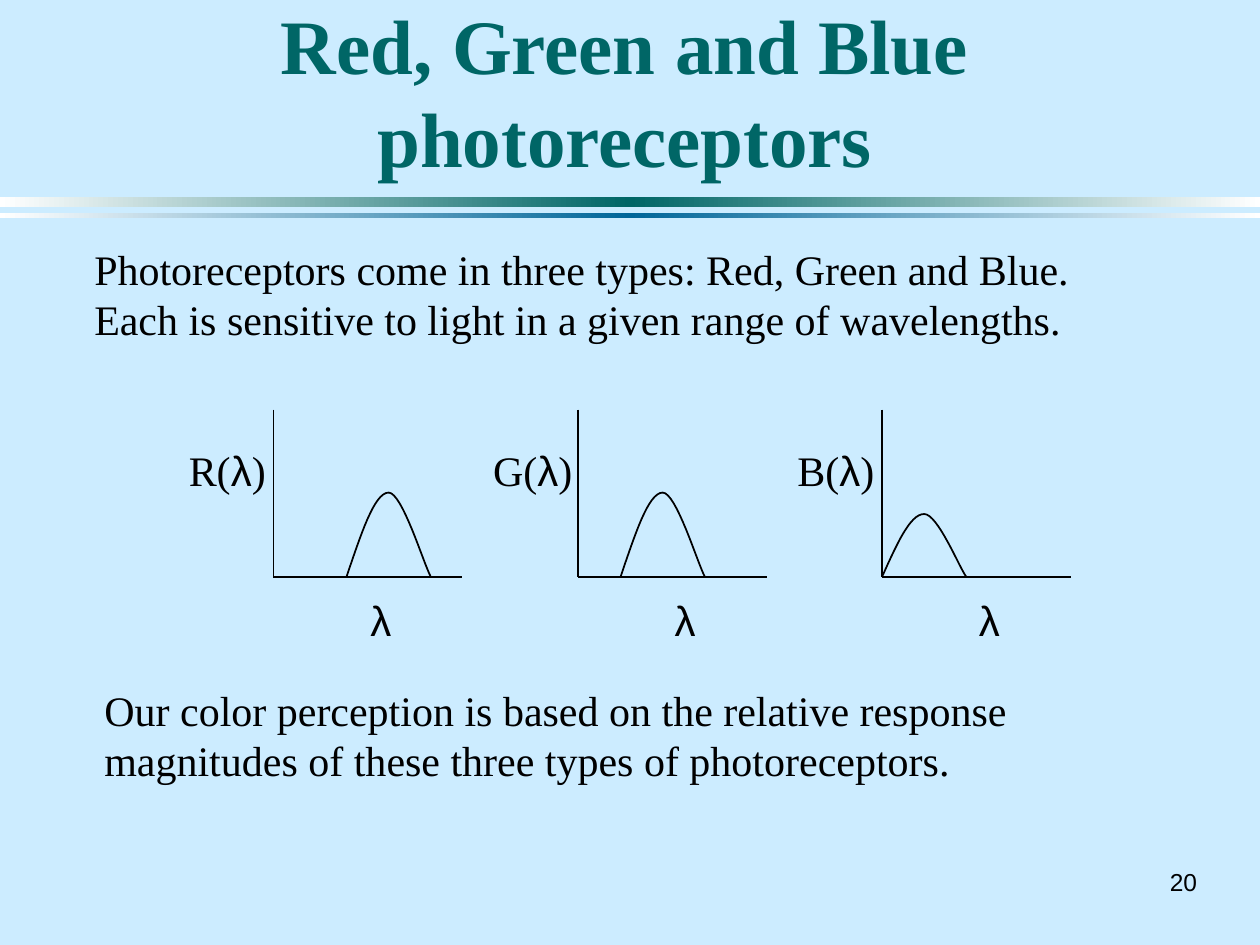
import copy

import pptx
import pptx.dml.color
import pptx.enum.shapes
import pptx.enum.text
import pptx.oxml
import pptx.oxml.ns
import pptx.util
from pptx.util import Inches

RGBColor = pptx.dml.color.RGBColor
SKY = RGBColor(0xCC, 0xEC, 0xFF)
TEAL = RGBColor(0x00, 0x66, 0x66)
BLUE = RGBColor(0x00, 0x66, 0x99)
WHITE = RGBColor(0xFF, 0xFF, 0xFF)
BLACK = RGBColor(0x00, 0x00, 0x00)

SERIF = "Times New Roman"
SANS = "Arial"
ALIGN = pptx.enum.text.PP_ALIGN
ANCHOR = pptx.enum.text.MSO_ANCHOR
AUTO_SIZE = pptx.enum.text.MSO_AUTO_SIZE

AXIS_TOP, AXIS_BOTTOM, AXIS_WIDTH = 3.25, 4.58, 1.5
FIRST_ORIGIN, PLOT_STEP = 2.17, 2.415
CURVE_WIDTH = 0.67
# Cubic Bezier segments of a response curve, in a unit square with y upwards
CURVE_SEGMENTS = [
    [(0, 0), (0.17, 0.5), (0.33, 1), (0.5, 1)],
    [(0.5, 1), (0.66, 1), (0.91, 0.17), (1, 0)],
]
# Receptor letter, curve start from the origin, curve height
RECEPTORS = [("R", 0.58, 0.67), ("G", 0.34, 0.67), ("B", 0, 0.5)]


def add_run(para, text, font=SERIF, size=24, color=BLACK, bold=False):
    span = para.add_run()
    span.text = text
    span.font.name = font
    span.font.size = pptx.util.Pt(size)
    span.font.color.rgb = color
    span.font.bold = bold


def add_text(slide, left, top, width, height, paragraphs, wrap=False):
    """Add a text box; each paragraph is a list of (text, font) runs."""
    box = slide.shapes.add_textbox(
        Inches(left), Inches(top), Inches(width), Inches(height))
    frame = box.text_frame
    frame.word_wrap = wrap
    frame.auto_size = AUTO_SIZE.SHAPE_TO_FIT_TEXT
    for index, runs in enumerate(paragraphs):
        para = frame.add_paragraph() if index else frame.paragraphs[0]
        for text, font in runs:
            add_run(para, text, font)
    return box


def set_title(slide, text):
    title = slide.shapes.title
    title.left, title.top = Inches(0.67), Inches(0.25)
    title.width, title.height = Inches(8.58), Inches(1.25)
    frame = title.text_frame
    frame.word_wrap = True
    frame.auto_size = AUTO_SIZE.NONE
    frame.vertical_anchor = ANCHOR.BOTTOM
    para = frame.paragraphs[0]
    para.alignment = ALIGN.CENTER
    add_run(para, text, size=44, color=TEAL, bold=True)


def add_gradient_bar(slide, top, height, color):
    """Add a full-width bar that fades from the colour to white at both ends."""
    bar = slide.shapes.add_shape(
        pptx.enum.shapes.MSO_SHAPE.RECTANGLE,
        Inches(0), Inches(top), Inches(10), Inches(height))
    bar.shadow.inherit = False
    bar.line.fill.background()
    bar.fill.gradient()
    bar.fill.gradient_angle = 0
    stop_list = bar.fill._fill._gradFill.find(pptx.oxml.ns.qn("a:gsLst"))
    stop_list.insert(1, copy.deepcopy(stop_list[0]))
    stops = zip(bar.fill.gradient_stops, (0, 0.5, 1), (WHITE, color, WHITE))
    for stop, position, stop_color in stops:
        stop.position = position
        stop.color.rgb = stop_color


def add_line(slide, start, end):
    line = slide.shapes.add_connector(
        pptx.enum.shapes.MSO_CONNECTOR.STRAIGHT,
        *(Inches(length) for length in start + end))
    line.line.color.rgb = BLACK
    line.line.width = pptx.util.Pt(1)
    line._element.spPr.append(pptx.oxml.parse_xml(
        f'<a:effectLst {pptx.oxml.ns.nsdecls("a")}/>'))


def bezier_point(points, t):
    weights = ((1 - t) ** 3, 3 * t * (1 - t) ** 2, 3 * t * t * (1 - t), t ** 3)
    return tuple(sum(weight * point[axis] for weight, point in zip(weights, points))
                 for axis in (0, 1))


def add_curve(slide, left, height, steps=16):
    """Draw the response curve standing on the wavelength axis."""
    points = [(0, 0)] + [bezier_point(segment, step / steps)
                         for segment in CURVE_SEGMENTS
                         for step in range(1, steps + 1)]
    placed = [(Inches(left + x * CURVE_WIDTH), Inches(AXIS_BOTTOM - y * height))
              for x, y in points]
    builder = slide.shapes.build_freeform(*placed[0])
    builder.add_line_segments(placed[1:], close=False)
    curve = builder.convert_to_shape()
    curve.shadow.inherit = False
    curve.fill.background()
    curve.line.color.rgb = BLACK
    curve.line.width = pptx.util.Pt(1)


def add_response_plot(slide, origin, letter, curve_offset, curve_height):
    corner = (origin, AXIS_BOTTOM)
    add_line(slide, (origin, AXIS_TOP), corner)
    add_line(slide, corner, (origin + AXIS_WIDTH, AXIS_BOTTOM))
    add_curve(slide, origin + curve_offset, curve_height)
    add_text(slide, origin - 0.77, 3.48, 0.84, 0.5,
             [[(f"{letter}(", SERIF), ("λ", SANS), (")", SERIF)]])
    add_text(slide, origin + 0.67, 4.67, 0.38, 0.5, [[("λ", SANS)]])


def add_page_number(slide, number):
    box = add_text(slide, 9.17, 6.83, 0.43, 0.33, [])
    box.text_frame.vertical_anchor = ANCHOR.MIDDLE
    para = box.text_frame.paragraphs[0]
    para.alignment = ALIGN.RIGHT
    add_run(para, number, SANS, 14)


def main():
    deck = pptx.Presentation()
    deck.slide_width, deck.slide_height = Inches(10), Inches(7.5)
    slide = deck.slides.add_slide(deck.slide_layouts.get_by_name("Title Only"))
    slide.background.fill.solid()
    slide.background.fill.fore_color.rgb = SKY

    add_gradient_bar(slide, 1.56, 0.08, TEAL)
    add_gradient_bar(slide, 1.69, 0.04, BLUE)
    add_page_number(slide, "20")
    set_title(slide, "Red, Green and Blue photoreceptors")
    add_text(slide, 0.65, 1.88, 7.94, 0.9, [
        [("Photoreceptors come in three types: Red, Green and Blue.", SERIF)],
        [("Each is sensitive to light in a given range of wavelengths.", SERIF)],
    ])
    for index, receptor in enumerate(RECEPTORS):
        add_response_plot(slide, FIRST_ORIGIN + index * PLOT_STEP, *receptor)
    add_text(slide, 0.73, 5.38, 8.6, 0.9, [
        [("Our color perception is based on the relative response magnitudes "
          "of these three types of photoreceptors.", SERIF)],
    ], wrap=True)
    deck.save("out.pptx")


if __name__ == "__main__":
    main()
